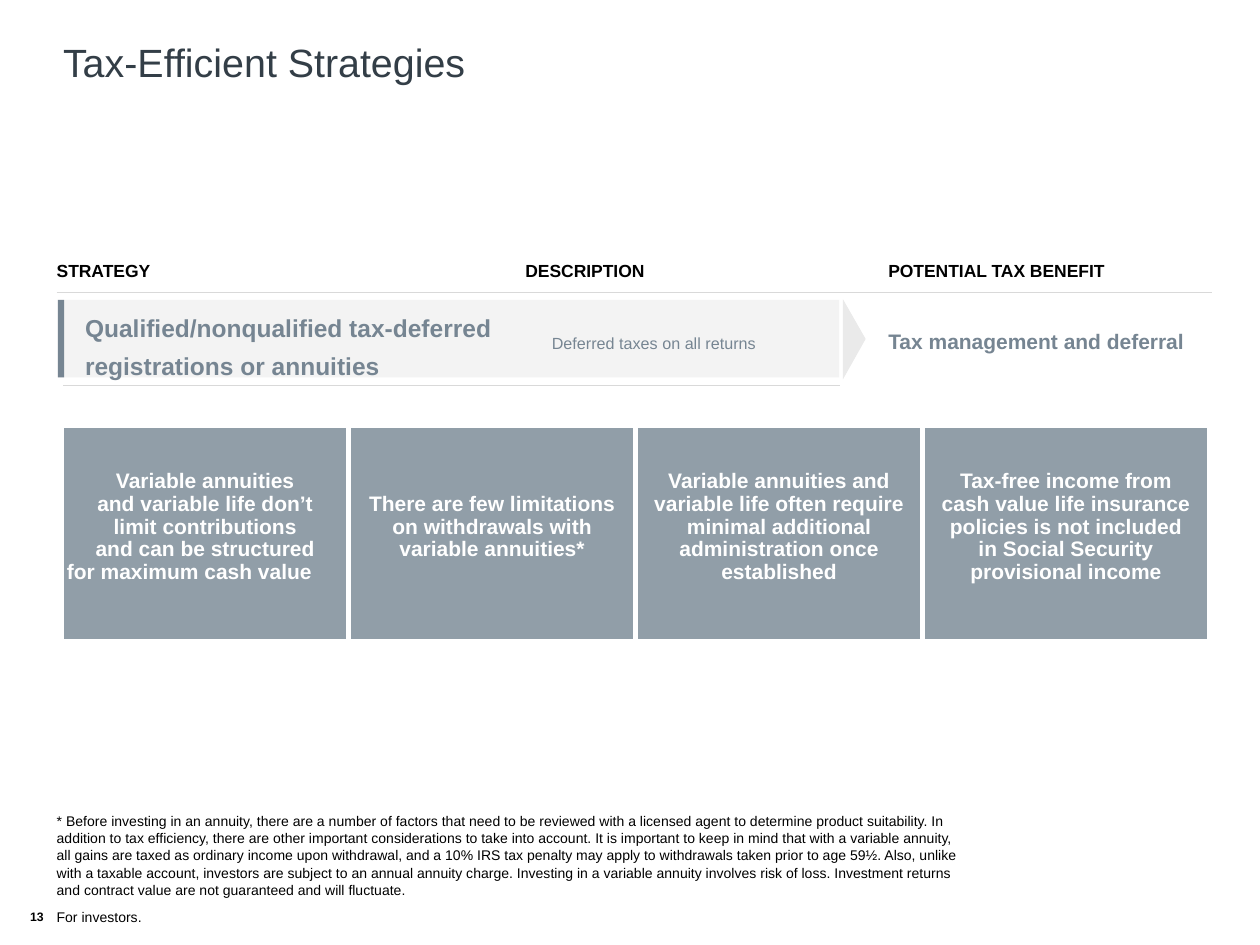
import lxml.etree
import pptx
import pptx.dml.color
import pptx.enum.shapes
import pptx.enum.text
import pptx.oxml
import pptx.oxml.ns
import pptx.util

COLORS = {"title": "333E47", "text": "000000", "slate": "768592", "card": "919EA8",
          "band": "F1F1F1", "arrow": "EAEAEA", "rule": "D9D9D9", "white": "FFFFFF"}
FONT = "Arial"
COLUMNS, ROWS = 100, 75
WIDTH, HEIGHT = pptx.util.Inches(10), pptx.util.Inches(7.5)
HEADINGS = [(0, "STRATEGY"), (37.2, "DESCRIPTION"), (66, "POTENTIAL TAX BENEFIT")]
CARDS = [
    (0.25, [["Variable annuities", "and variable life don’t", "limit contributions",
             "and can be structured"], ["for maximum cash value"]]),
    (0.14, [["There are few limitations", "on withdrawals with", "variable annuities*"]]),
    (0.14, [["Variable annuities and", "variable life often require", "minimal additional",
             "administration once", "established"]]),
    (0.14, [["Tax-free income from", "cash value life insurance", "policies is not included",
             "in Social Security", "provisional income"]]),
]
FOOTNOTE = (
    "* Before investing in an annuity, there are a number of factors that need to be reviewed "
    "with a licensed agent to determine product suitability. In addition to tax efficiency, "
    "there are other important considerations to take into account. It is important to keep in "
    "mind that with a variable annuity, all gains are taxed as ordinary income upon withdrawal, "
    "and a 10% IRS tax penalty may apply to withdrawals taken prior to age 59½. Also, unlike "
    "with a taxable account, investors are subject to an annual annuity charge. Investing in a "
    "variable annuity involves risk of loss. Investment returns and contract value are not "
    "guaranteed and will fluctuate.")


def color(name):
    """Return the named colour."""
    return pptx.dml.color.RGBColor.from_string(COLORS[name])


def place(box, left, top, width=0, height=0):
    """Turn grid lengths relative to a box into slide lengths."""
    column, row = WIDTH / COLUMNS, HEIGHT / ROWS
    return [round(length) for length in ((box[0] + left) * column, (box[1] + top) * row,
                                         width * column, height * row)]


def add_run(paragraph, text, size, fill, bold=False):
    """Add one formatted run to a paragraph."""
    run = paragraph.add_run()
    run.text = text
    run.font.name, run.font.size, run.font.bold = FONT, pptx.util.Pt(size), bold
    run.font.color.rgb = color(fill)


def clear_margins(frame):
    """Make a text frame wrap from its top left corner without insets."""
    frame.word_wrap = True
    frame.margin_left = frame.margin_right = frame.margin_top = frame.margin_bottom = 0
    frame.vertical_anchor = pptx.enum.text.MSO_ANCHOR.TOP


def add_text(slide, position, text, size, fill, bold=False, spacing=None):
    """Add a text box holding one paragraph."""
    frame = slide.shapes.add_textbox(*position).text_frame
    clear_margins(frame)
    paragraph = frame.paragraphs[0]
    paragraph.line_spacing = spacing
    add_run(paragraph, text, size, fill, bold)


def paint(shape, fill):
    """Give a shape a plain fill without line or shadow."""
    shape.shadow.inherit = False
    shape.fill.solid()
    shape.fill.fore_color.rgb = color(fill)
    shape.line.fill.background()


def add_block(slide, position, fill):
    """Add a plain rectangle."""
    shape = slide.shapes.add_shape(pptx.enum.shapes.MSO_SHAPE.RECTANGLE, *position)
    paint(shape, fill)
    return shape


def add_rule(slide, box, left, top, width):
    """Add a thin horizontal line."""
    x, y, length, _ = place(box, left, top, width)
    line = slide.shapes.add_connector(pptx.enum.shapes.MSO_CONNECTOR.STRAIGHT, x, y, x + length, y)
    line.line.color.rgb, line.line.width = color("rule"), pptx.util.Pt(0.75)
    lxml.etree.SubElement(line._element.spPr, pptx.oxml.ns.qn("a:effectLst"))


def add_title(slide, box):
    """Place and format the slide title."""
    title = slide.shapes.title
    title.left, title.top, title.width, title.height = place(box, 0, 0, *box[2:])
    clear_margins(title.text_frame)
    title.text_frame.margin_left = title.text_frame.margin_top = pptx.util.Inches(0.02)
    paragraph = title.text_frame.paragraphs[0]
    paragraph.alignment = pptx.enum.text.PP_ALIGN.LEFT
    add_run(paragraph, "Tax-Efficient Strategies", 22.5, "title")


def add_headings(slide, box):
    """Add the column headings and the rule below them."""
    for left, heading in HEADINGS:
        add_text(slide, place(box, left, 0, 20, 2), heading, 10, "text", True)
    add_rule(slide, box, 0, 2.6, box[2])


def add_strategy(slide, box):
    """Add the shaded strategy band, its arrowhead and its texts."""
    band = add_block(slide, place(box, 0, 0, 62, box[3]), "band")
    tint = band.fill._xPr.find(".//" + pptx.oxml.ns.qn("a:srgbClr"))
    lxml.etree.SubElement(tint, pptx.oxml.ns.qn("a:alpha"), val="85000")
    add_block(slide, place(box, 0, 0, 0.5, box[3]), "slate")
    corners = [tuple(place(box, left, top)[:2]) for left, top in
               ((62.3, -0.05), (62.3, 6.3), (64.1, 3.1))]
    builder = slide.shapes.build_freeform(*corners[0])
    builder.add_line_segments(corners[1:], close=True)
    paint(builder.convert_to_shape(), "arrow")
    add_rule(slide, box, 0.4, 6.8, 61.7)
    add_text(slide, place(box, 2.15, 0.4, 34, 6), "Qualified/nonqualified tax-deferred "
             "registrations or annuities", 14, "slate", True, pptx.util.Pt(21.7))
    add_text(slide, place(box, 39.2, 2.65, 20, 2), "Deferred taxes on all returns", 9.2, "slate")
    add_text(slide, place(box, 65.9, 2.27, 25, 2.3), "Tax management and deferral",
             12, "slate", True)


def fill_card(cell, inset, paragraphs):
    """Format one table cell and write its centred lines."""
    properties = cell._tc.get_or_add_tcPr()
    for side in ("lnL", "lnR"):
        properties.append(pptx.oxml.parse_xml(
            f'<a:{side} {pptx.oxml.ns.nsdecls("a")} w="38100"><a:solidFill>'
            f'<a:srgbClr val="{COLORS["white"]}"/></a:solidFill></a:{side}>'))
    cell.fill.solid()
    cell.fill.fore_color.rgb = color("card")
    cell.vertical_anchor = pptx.enum.text.MSO_ANCHOR.MIDDLE
    cell.margin_left = cell.margin_top = 0
    cell.margin_right, cell.margin_bottom = pptx.util.Inches(inset), pptx.util.Inches(0.1)
    for index, lines in enumerate(paragraphs):
        paragraph = cell.text_frame.add_paragraph() if index else cell.text_frame.paragraphs[0]
        paragraph.alignment = pptx.enum.text.PP_ALIGN.CENTER
        paragraph.line_spacing = 0.97
        if index == 0:
            paragraph._p.get_or_add_pPr().set("marL", str(pptx.util.Inches(inset)))
        for number, line in enumerate(lines):
            if number:
                paragraph.add_line_break()
            add_run(paragraph, line, 12, "white", True)


def add_cards(slide, box):
    """Add the one-row table of benefits."""
    table = slide.shapes.add_table(1, len(CARDS), *place(box, 0, 0, *box[2:])).table
    table.first_row = table.horz_banding = False
    for cell, (inset, paragraphs) in zip(table.rows[0].cells, CARDS):
        fill_card(cell, inset, paragraphs)


def add_footer(slide, box):
    """Add the footnote, the page number and the audience line."""
    add_text(slide, place(box, 2.1, 0, 72.2, 7), FOOTNOTE, 8, "text", spacing=1.04)
    add_text(slide, place(box, 0, 7.8, 2, 1.5), "13", 7, "text", True)
    add_text(slide, place(box, 2.1, 7.7, 20, 1.5), "For investors.", 8, "text")


def main():
    """Build the slide and save it."""
    presentation = pptx.Presentation()
    presentation.slide_width, presentation.slide_height = WIDTH, HEIGHT
    slide = presentation.slides.add_slide(presentation.slide_layouts[5])
    add_title(slide, (4.8, 2.8, 88.8, 7))
    add_headings(slide, (4.5, 20.6, 91.7, 2.6))
    add_strategy(slide, (4.6, 23.8, 91.6, 6.15))
    add_cards(slide, (4.9, 33.9, 91.1, 16.9))
    add_footer(slide, (2.4, 64.4, 74.3, 9.3))
    presentation.save("out.pptx")


if __name__ == "__main__":
    main()
